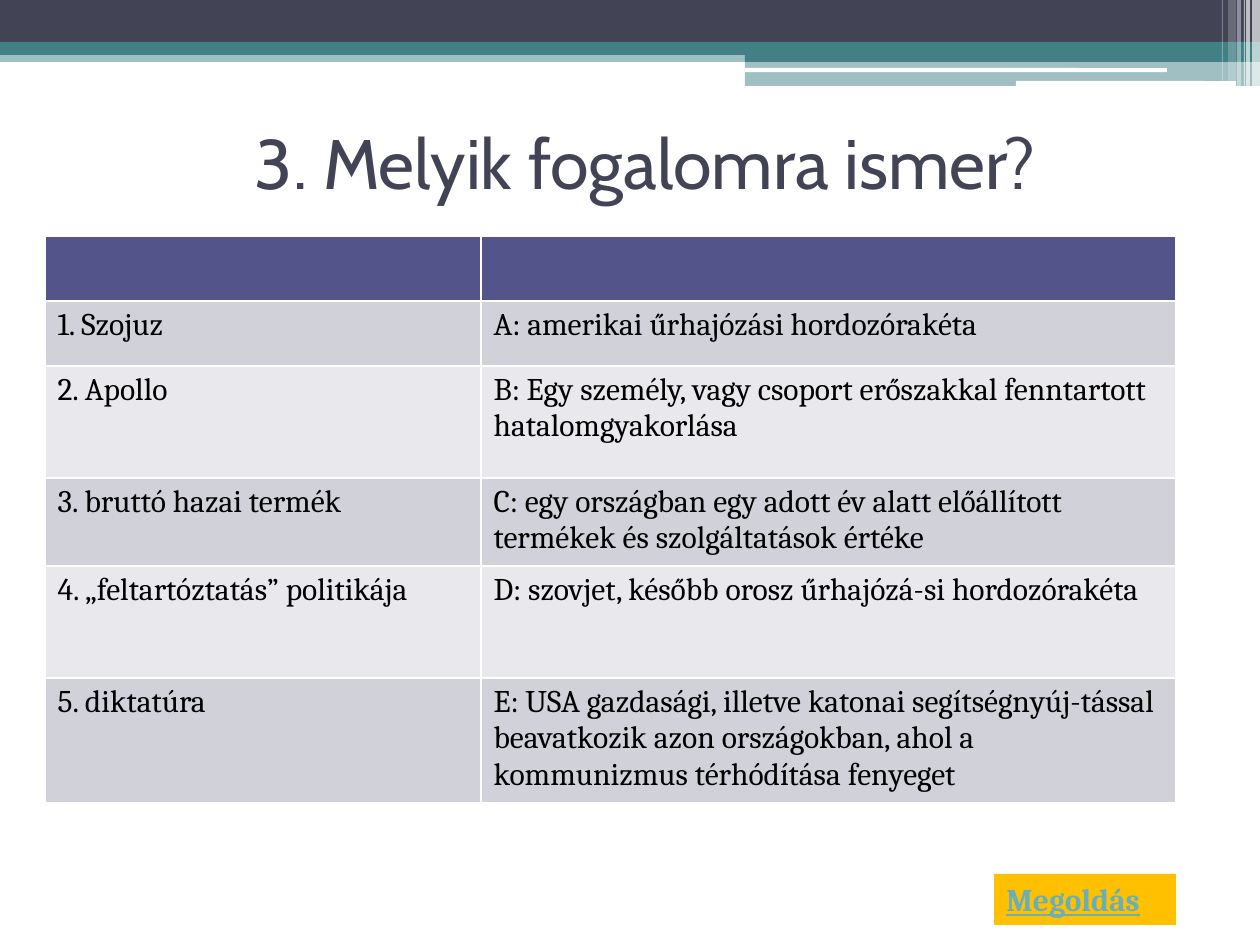
from pptx import Presentation
from pptx.dml.color import RGBColor
from pptx.enum.shapes import MSO_SHAPE as Shape
from pptx.enum.text import MSO_ANCHOR as Anchor, PP_ALIGN as Align
from pptx.oxml.ns import qn
from pptx.util import Emu, Pt
from dataclasses import dataclass
from lxml.etree import SubElement, Element


@dataclass(frozen=True)
class Theme:
    dark: str = "424456"
    teal: str = "438086"
    white: str = "FFFFFF"
    header: str = "53548A"
    odd: str = "D1D1DA"
    even: str = "E9E9ED"
    text: str = "000000"
    button: str = "FFC000"
    link: str = "67AFBD"
    title_font: str = "Cabin"
    body_font: str = "Cambria"
    title_size: int = 40
    body_size: int = 18
    outline: float = 1.4


T = Theme()
PX_PER_INCH = 126
SLIDE = (1260, 945)

TITLE = "3. Melyik fogalomra ismer?"
TITLE_BOX = (78, 88, 1134, 148)
BUTTON = "Megoldás"
BUTTON_BOX = (994, 874, 182, 51)

BANDS = [
    (Shape.RECTANGLE, (0, 50, 1260, 12), T.teal, 50),
    (Shape.RECTANGLE, (0, 0, 1260, 42), T.dark, 100),
    (Shape.RECTANGLE, (0, 42, 1260, 13), T.teal, 100),
    (Shape.RECTANGLE, (745, 49, 515, 13), T.teal, 100),
    (Shape.RECTANGLE, (745, 61, 515, 25), T.teal, 50),
    (Shape.ROUNDED_RECTANGLE, (745, 68, 422, 4), T.white, 100),
    (Shape.ROUNDED_RECTANGLE, (1016, 81, 220, 5), T.white, 100),
]
STRIPES = [
    (1252, 8, 86, 65), (1246, 4, 86, 65), (1244, 1, 86, 60),
    (1237, 4, 86, 40), (1228, 8, 81, 20), (1222, 1, 81, 30),
]

TABLE_AT = (45, 236)
COLS = [436, 695]
ROWS = [
    (65, "", ""),
    (65, "1. Szojuz", "A: amerikai űrhajózási hordozórakéta"),
    (112, "2. Apollo",
     "B: Egy személy, vagy csoport erőszakkal fenntartott hatalomgyakorlása"),
    (88, "3. bruttó hazai termék",
     "C: egy országban egy adott év alatt előállított termékek és szolgáltatások értéke"),
    (112, "4. „feltartóztatás” politikája",
     "D: szovjet, később orosz űrhajózá-si hordozórakéta"),
    (125, "5. diktatúra",
     "E: USA gazdasági, illetve katonai segítségnyúj-tással beavatkozik azon "
     "országokban, ahol a kommunizmus térhódítása fenyeget"),
]


def px(n):
    return Emu(round(n * 914400 / PX_PER_INCH))


def paint(fill, color, alpha=100):
    fill.solid()
    fill.fore_color.rgb = RGBColor.from_string(color)
    if alpha < 100:
        clr = fill._xPr.find(qn("a:solidFill"))[0]
        SubElement(clr, qn("a:alpha"), val=str(alpha * 1000))


def write(tf, text, font, size, color, align=Align.LEFT):
    tf.text = text
    p = tf.paragraphs[0]
    p.alignment = align
    for r in p.runs:
        r.font.name = font
        r.font.size = Pt(size)
        r.font.color.rgb = RGBColor.from_string(color)
    return p


def add_block(s, kind, box, color, alpha=100):
    sp = s.shapes.add_shape(kind, *map(px, box))
    sp.shadow.inherit = False
    sp.line.fill.background()
    paint(sp.fill, color, alpha)
    return sp


def add_title(s):
    sp = s.shapes.title
    sp.left, sp.top, sp.width, sp.height = map(px, TITLE_BOX)
    sp.text_frame.vertical_anchor = Anchor.MIDDLE
    write(sp.text_frame, TITLE, T.title_font, T.title_size, T.dark, Align.CENTER)


def add_button(s):
    tf = add_block(s, Shape.RECTANGLE, BUTTON_BOX, T.button).text_frame
    tf.word_wrap = True
    tf.vertical_anchor = Anchor.TOP
    r = write(tf, BUTTON, T.body_font, T.body_size, T.link).runs[0]
    r.font.bold = r.font.underline = True
    ln = Element(qn("a:ln"), w=str(Pt(T.outline)))
    SubElement(SubElement(ln, qn("a:solidFill")), qn("a:srgbClr"), val=T.white)
    r.font._element.insert(0, ln)


def add_terms(s):
    size = (sum(COLS), sum(row[0] for row in ROWS))
    table = s.shapes.add_table(len(ROWS), len(COLS), *map(px, TABLE_AT + size)).table
    for col, width in zip(table.columns, COLS):
        col.width = px(width)
    for i, (height, *texts) in enumerate(ROWS):
        table.rows[i].height = px(height)
        color = T.header if i == 0 else T.odd if i % 2 else T.even
        for j, text in enumerate(texts):
            cell = table.cell(i, j)
            paint(cell.fill, color)
            write(cell.text_frame, text, T.body_font, T.body_size, T.text)


def main():
    prs = Presentation()
    prs.slide_width, prs.slide_height = map(px, SLIDE)
    s = prs.slides.add_slide(prs.slide_layouts[5])
    for band in BANDS:
        add_block(s, *band)
    for left, width, height, alpha in STRIPES:
        add_block(s, Shape.RECTANGLE, (left, 0, width, height), T.white, alpha)
    add_title(s)
    add_button(s)
    add_terms(s)
    prs.save("out.pptx")


if __name__ == "__main__":
    main()
